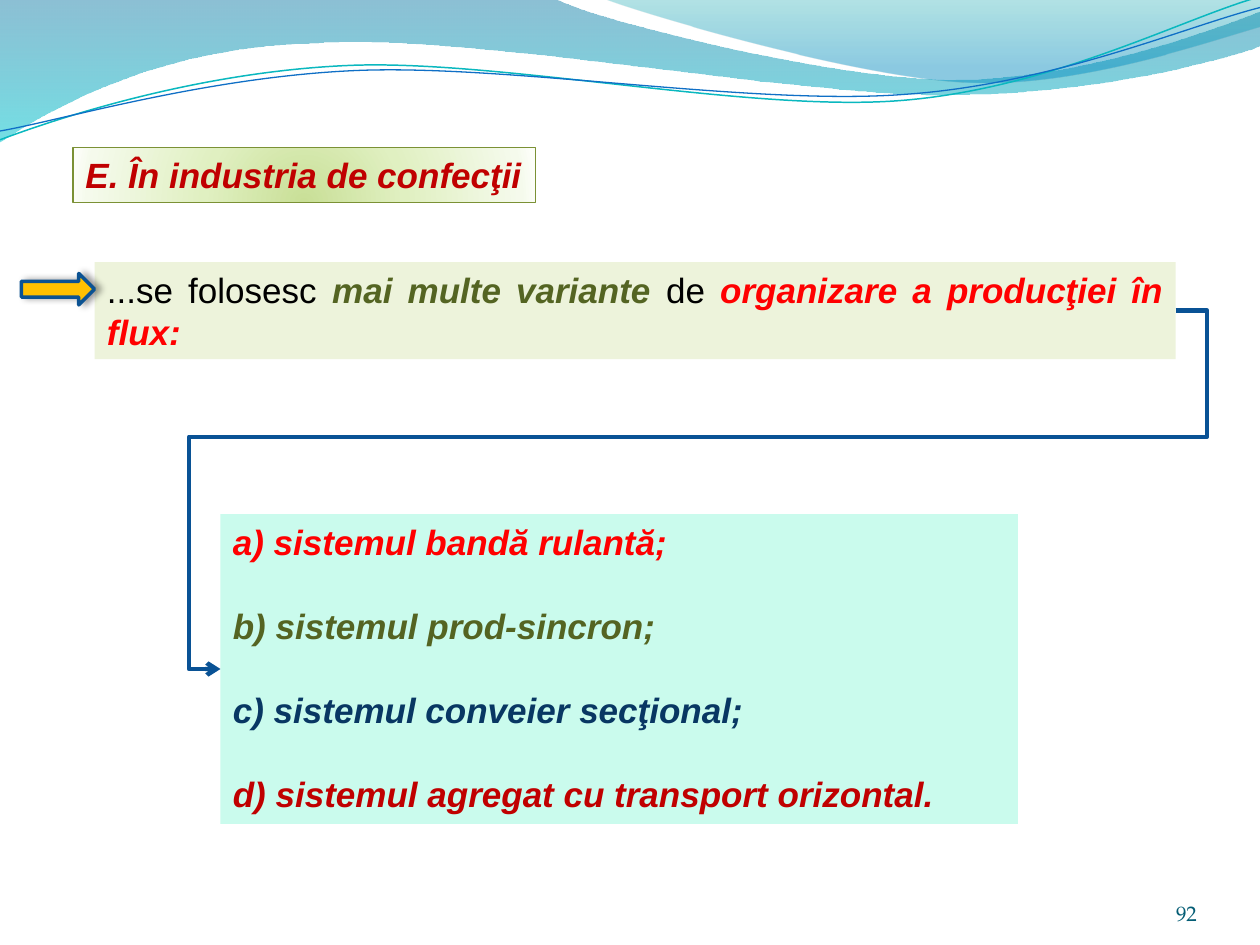
from lxml.etree import SubElement
from pptx import Presentation
from pptx.dml.color import RGBColor
from pptx.enum.shapes import MSO_CONNECTOR as Connector, MSO_SHAPE as Shape
from pptx.enum.text import MSO_ANCHOR as Anchor, MSO_AUTO_SIZE as AutoSize, PP_ALIGN as Align
from pptx.oxml.ns import qn
from pptx.util import Inches, Pt

WIDTH, HEIGHT = 10, 7.5
COLORS = {
    "heading": "C00000", "heading_line": "7B9135",
    "intro_fill": "EDF3DB", "list_fill": "CAFBED", "black": "000000",
    "red": "FF0000", "olive": "546422", "navy": "083763", "number": "045D75",
    "link": "095295", "pointer": "FFC000", "pointer_line": "0B5292",
    "teal_wave": "0AB8BF", "blue_wave": "0F6FC6",
}
# Gradient stops: position %, colour, opacity %
BAND_STOPS = [(0, "0074A1", 45), (100, "00C6CF", 55)]
CREST_STOPS = [(0, "00A1A9", 30), (80, "008BBF", 45)]
HEADING_STOPS = [(0, "C9DF97", 100), (43, "E0F0C1", 100),
                 (93, "F5FAEC", 100), (100, "FCFEF8", 100)]

# Wave outlines: a pair is a straight step, six numbers are a Bezier curve
BAND = [(0, 0), (4.4, -0.01), (4.76, 0.17, 6.64, 0.63, 7.58, 0.63),
        (8.53, 0.63, 9.58, 0.26, 10, 0.09), (10.01, 0.36),
        (9.83, 0.44, 8.7, 0.76, 7.46, 0.75), (6.22, 0.75, 3.82, 0.28, 2.57, 0.34),
        (1.29, 0.36, 0.46, 0.83, -0.01, 1.13), (0, 0)]
CREST = [(4.79, -0.01), (5.09, 0.11, 6.82, 0.62, 7.69, 0.65),
         (8.56, 0.69, 9.61, 0.32, 10, 0.21), (10, 0), (4.79, -0.01)]
TEAL_WAVE = [(0, 1.11), (0.48, 0.93, 1.58, 0.57, 2.77, 0.52),
             (3.95, 0.47, 5.93, 0.89, 7.13, 0.8), (8.33, 0.71, 9.38, 0.15, 9.98, -0.02)]
BLUE_WAVE = [(0, 1.04), (0.47, 0.96, 1.64, 0.61, 2.83, 0.56),
             (4.03, 0.51, 5.97, 0.84, 7.17, 0.75), (8.36, 0.67, 9.41, 0.21, 10, 0.06)]


def rgb(name):
    return RGBColor.from_string(COLORS[name])


def add_color(parent, color, opacity):
    node = SubElement(parent, qn("a:srgbClr"), val=color)
    SubElement(node, qn("a:alpha"), val=str(opacity * 1000))


def set_gradient(shape, stops, radial=False):
    shape.fill.gradient()
    gradient = shape._element.spPr.find(qn("a:gradFill"))
    for child in list(gradient):
        gradient.remove(child)
    stop_list = SubElement(gradient, qn("a:gsLst"))
    for position, color, opacity in stops:
        add_color(SubElement(stop_list, qn("a:gs"), pos=str(position * 1000)), color, opacity)
    if radial:
        circle = SubElement(gradient, qn("a:path"))
        circle.set("path", "circle")
        SubElement(circle, qn("a:fillToRect"), l="50000", t="130000", r="50000", b="-30000")
    else:
        SubElement(gradient, qn("a:lin"), ang="5400000", scaled="0")


def set_line(shape, color=None, width=1):
    if color:
        shape.line.color.rgb = rgb(color)
        shape.line.width = Pt(width)
    else:
        shape.line.fill.background()


def add_shadow(shape, color, opacity, blur, distance, angle):
    effects = shape._element.spPr.find(qn("a:effectLst"))
    shadow = SubElement(effects, qn("a:outerShdw"), blurRad=str(Pt(blur)),
                        dist=str(Pt(distance)), dir=str(angle * 60000), rotWithShape="0")
    add_color(shadow, COLORS[color], opacity)


def bend_segments(wave, outline):
    """Turn the straight segments into Bezier curves where the outline has them."""
    segments = list(wave._element.iter(qn("a:lnTo")))
    for segment, step in zip(segments, outline[1:]):
        if len(step) == 2:
            continue
        segment.tag = qn("a:cubicBezTo")
        for index, (x, y) in enumerate((step[:2], step[2:4])):
            control = segment.makeelement(qn("a:pt"), x=str(Inches(x) - wave.left),
                                          y=str(Inches(y) - wave.top))
            segment.insert(index, control)


def add_wave(shapes, outline, stops=None, color=None, width=1):
    start, *knots = [(Inches(step[-2]), Inches(step[-1])) for step in outline]
    builder = shapes.build_freeform(*start, scale=1.0)
    builder.add_line_segments(knots, close=bool(stops))
    wave = builder.convert_to_shape()
    bend_segments(wave, outline)
    wave.shadow.inherit = False
    if stops:
        set_gradient(wave, stops)
    else:
        wave.fill.background()
    set_line(wave, color, width)


def add_box(slide, box, kind=Shape.RECTANGLE, fill=None, line=None, width=1):
    shape = slide.shapes.add_shape(kind, *map(Inches, box))
    shape.shadow.inherit = False
    if fill:
        shape.fill.solid()
        shape.fill.fore_color.rgb = rgb(fill)
    set_line(shape, line, width)
    return shape


def write(shape, paragraphs, size=20, font="Arial", align=Align.LEFT, anchor=Anchor.TOP,
          wrap=True, gap=0, grow=True):
    """Fill the shape with paragraphs, each a list of (text, colour, bold italic)."""
    frame = shape.text_frame
    frame.word_wrap = wrap
    frame.vertical_anchor = anchor
    if grow:
        frame.auto_size = AutoSize.SHAPE_TO_FIT_TEXT
    for index, runs in enumerate(paragraphs):
        paragraph = frame.add_paragraph() if index else frame.paragraphs[0]
        paragraph.alignment = align
        paragraph.space_before = Pt(gap if index else 0)
        for text, color, strong in runs:
            run = paragraph.add_run()
            run.text = text
            run.font.size, run.font.name = Pt(size), font
            run.font.bold = run.font.italic = strong
            run.font.color.rgb = rgb(color)


def add_elbow(slide, source, target, color, width, bends):
    """Lead from the right side of source around to the left side of target."""
    elbow = slide.shapes.add_connector(Connector.ELBOW, 0, 0, 0, 0)
    elbow.begin_connect(source, 3)
    elbow.end_connect(target, 1)
    set_line(elbow, color, width)
    properties = elbow._element.spPr
    geometry = properties.find(qn("a:prstGeom"))
    geometry.set("prst", "bentConnector5")
    guides = geometry.get_or_add_avLst()
    for number, share in enumerate(bends, 1):
        SubElement(guides, qn("a:gd"), name=f"adj{number}", fmla=f"val {round(share * 100000)}")
    SubElement(properties.find(qn("a:ln")), qn("a:tailEnd"), type="arrow")
    SubElement(properties, qn("a:effectLst"))


def add_page_number(slide, number):
    label = slide.shapes.add_textbox(*map(Inches, (8.67, 6.95, 0.83, 0.4)))
    frame = label.text_frame
    frame.margin_left = frame.margin_right = frame.margin_top = frame.margin_bottom = 0
    write(label, [[(number, "number", False)]], size=12, font="TeX Gyre Pagella",
          align=Align.RIGHT, anchor=Anchor.BOTTOM, grow=False)


def main():
    deck = Presentation()
    deck.slide_width, deck.slide_height = Inches(WIDTH), Inches(HEIGHT)
    slide = deck.slides.add_slide(deck.slide_layouts[6])

    add_wave(slide.shapes, BAND, stops=BAND_STOPS)
    add_wave(slide.shapes, CREST, stops=CREST_STOPS)
    wave_lines = slide.shapes.add_group_shape().shapes
    add_wave(wave_lines, TEAL_WAVE, color="teal_wave", width=0.85)
    add_wave(wave_lines, BLUE_WAVE, color="blue_wave", width=0.75)
    add_page_number(slide, "92")

    heading = add_box(slide, (0.58, 1.17, 3.67, 0.44), line="heading_line", width=0.75)
    set_gradient(heading, HEADING_STOPS, radial=True)
    write(heading, [[("E. În industria de confecţii", "heading", True)]],
          align=Align.JUSTIFY, wrap=False)

    intro = add_box(slide, (0.75, 2.08, 8.58, 0.77), fill="intro_fill")
    write(intro, [[("...se folosesc ", "black", False),
                   ("mai multe variante ", "olive", True),
                   ("de ", "black", False),
                   ("organizare a producţiei în flux:", "red", True)]], align=Align.JUSTIFY)

    systems = add_box(slide, (1.75, 4.08, 6.33, 2.46), fill="list_fill")
    write(systems, [[("a) sistemul bandă rulantă;", "red", True)],
                    [("b) sistemul prod-sincron;", "olive", True)],
                    [("c) sistemul conveier secţional;", "navy", True)],
                    [("d) sistemul agregat cu transport orizontal.", "heading", True)]], gap=24)

    add_elbow(slide, intro, systems, "link", 2.5, bends=(-0.033, 0.352, 1.033))
    pointer = add_box(slide, (0.17, 2.17, 0.58, 0.25), Shape.RIGHT_ARROW,
                      fill="pointer", line="pointer_line", width=2)
    add_shadow(pointer, "black", 40, 4, 3, 0)

    deck.save("out.pptx")


if __name__ == "__main__":
    main()
